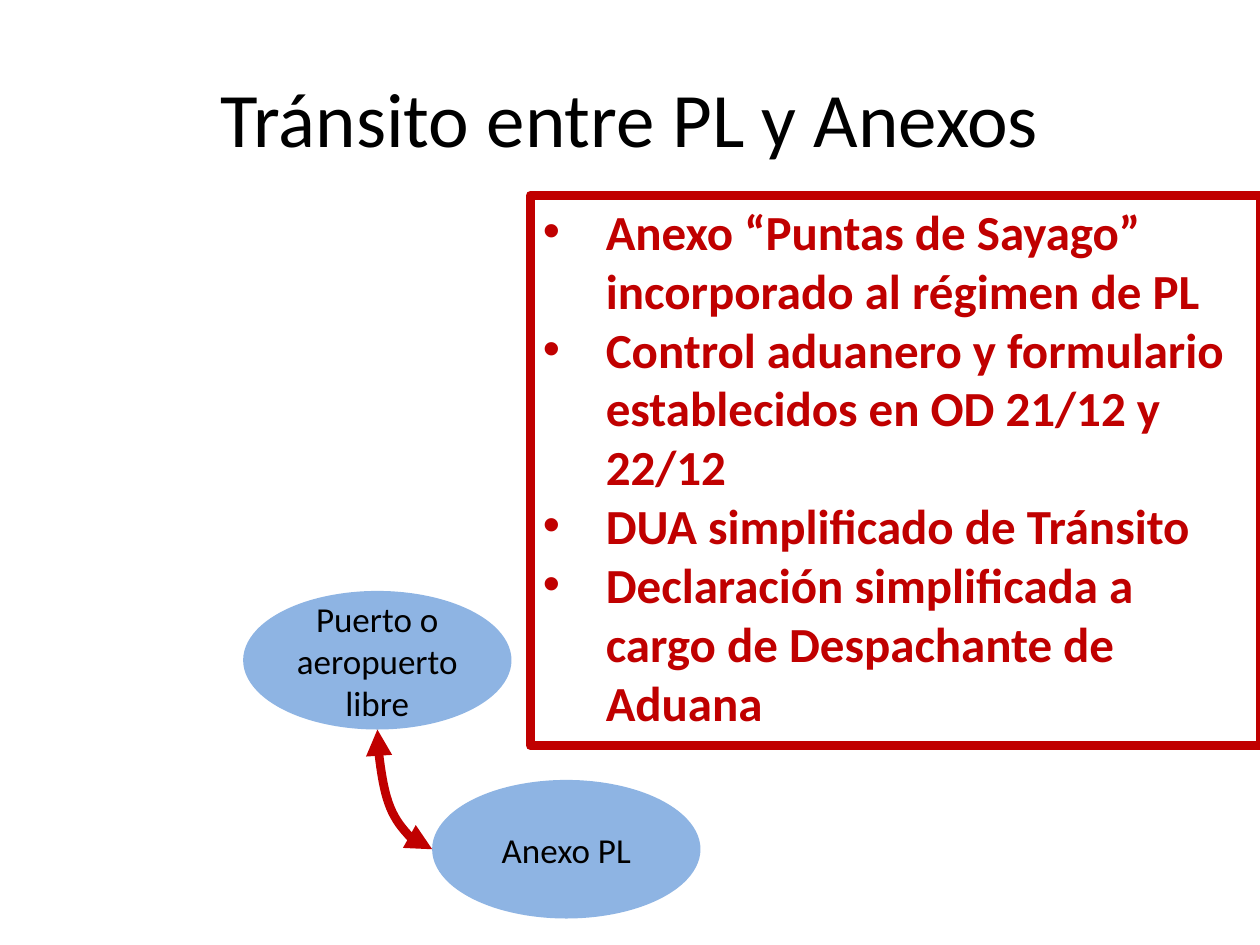
"""Build the slide on transit between free ports and their annexes."""
from dataclasses import dataclass

from lxml import etree
from pptx import Presentation
from pptx.dml.color import RGBColor
from pptx.enum import shapes, text
from pptx.oxml import ns
from pptx.slide import Slide
from pptx.util import Inches, Pt


@dataclass(frozen=True)
class Theme:
    font: str = "Calibri"
    black: str = "000000"
    red: str = "C00000"
    blue: str = "8EB4E3"
    head: int = 44
    body: int = 28
    node: int = 20
    line: int = 5


@dataclass(frozen=True)
class Node:
    label: str
    left: float
    top: float
    width: float = 2.13
    height: float = 1.1


THEME = Theme()
NODES = (
    Node("Puerto o aeropuerto libre", 1.93, 4.69),
    Node("Anexo PL", 3.43, 6.19),
)
POINTS = (
    "Anexo “Puntas de Sayago” incorporado al régimen de PL",
    "Control aduanero y formulario establecidos en OD 21/12 y 22/12",
    "DUA simplificado de Tránsito",
    "Declaración simplificada a cargo de Despachante de Aduana",
)


def write(para, words: str, size: int, color: str, bold: bool = False) -> None:
    run = para.add_run()
    run.text = words
    style = {"name": THEME.font, "size": Pt(size), "bold": bold}
    for key, value in style.items():
        setattr(run.font, key, value)
    run.font.color.rgb = RGBColor.from_string(color)


def stroke(shape) -> None:
    shape.line.color.rgb = RGBColor.from_string(THEME.red)
    shape.line.width = Pt(THEME.line)


def add_title(slide: Slide, words: str) -> None:
    title = slide.shapes.title
    place = {"left": 0.5, "top": 0.3, "width": 9, "height": 1.25}
    for key, value in place.items():
        setattr(title, key, Inches(value))
    title.text_frame.vertical_anchor = text.MSO_ANCHOR.MIDDLE
    para = title.text_frame.paragraphs[0]
    para.alignment = text.PP_ALIGN.CENTER
    write(para, words, THEME.head, THEME.black)


def add_node(slide: Slide, node: Node) -> None:
    box = map(Inches, (node.left, node.top, node.width, node.height))
    oval = slide.shapes.add_shape(shapes.MSO_SHAPE.OVAL, *box)
    oval.shadow.inherit = False
    oval.fill.solid()
    oval.fill.fore_color.rgb = RGBColor.from_string(THEME.blue)
    oval.line.fill.background()
    frame = oval.text_frame
    frame.word_wrap = True
    frame.vertical_anchor = text.MSO_ANCHOR.MIDDLE
    para = frame.paragraphs[0]
    para.alignment = text.PP_ALIGN.CENTER
    write(para, node.label, THEME.node, THEME.black)


def add_link(slide: Slide, first: Node, last: Node) -> None:
    x1, y1 = first.left + first.width / 2, first.top + first.height
    x2, y2 = last.left, last.top + last.height / 2
    midx, midy = (x1 + x2) / 2, (y1 + y2) / 2
    dx, dy = (y2 - y1) / 2, (x2 - x1) / 2
    ends = map(Inches, (midx + dx, midy - dy, midx - dx, midy + dy))
    link = slide.shapes.add_connector(shapes.MSO_CONNECTOR.CURVE, *ends)
    stroke(link)
    props = link._element.spPr
    props.find(ns.qn("a:xfrm")).set("rot", str(270 * 60000))
    props.find(ns.qn("a:prstGeom")).set("prst", "curvedConnector2")
    for tag in ("a:headEnd", "a:tailEnd"):
        etree.SubElement(props.find(ns.qn("a:ln")), ns.qn(tag), type="triangle")
    etree.SubElement(props, ns.qn("a:effectLst"))


def add_points(slide: Slide, points: tuple[str, ...]) -> None:
    box = slide.shapes.add_textbox(*map(Inches, (4.21, 1.55, 5.79, 4.37)))
    stroke(box)
    frame = box.text_frame
    frame.word_wrap = True
    frame.auto_size = text.MSO_AUTO_SIZE.SHAPE_TO_FIT_TEXT
    for rank, words in enumerate(points):
        para = frame.add_paragraph() if rank else frame.paragraphs[0]
        props = para._p.get_or_add_pPr()
        props.set("marL", str(Inches(0.5)))
        props.set("indent", str(Inches(-0.5)))
        etree.SubElement(props, ns.qn("a:buFont"), typeface="Arial")
        etree.SubElement(props, ns.qn("a:buChar"), char="•")
        write(para, words, THEME.body, THEME.red, bold=True)


def main() -> None:
    deck = Presentation()
    deck.slide_width, deck.slide_height = Inches(10), Inches(7.5)
    slide = deck.slides.add_slide(deck.slide_layouts[5])
    add_title(slide, "Tránsito entre PL y Anexos")
    for node in NODES:
        add_node(slide, node)
    add_link(slide, *NODES)
    add_points(slide, POINTS)
    deck.save("out.pptx")


if __name__ == "__main__":
    main()
